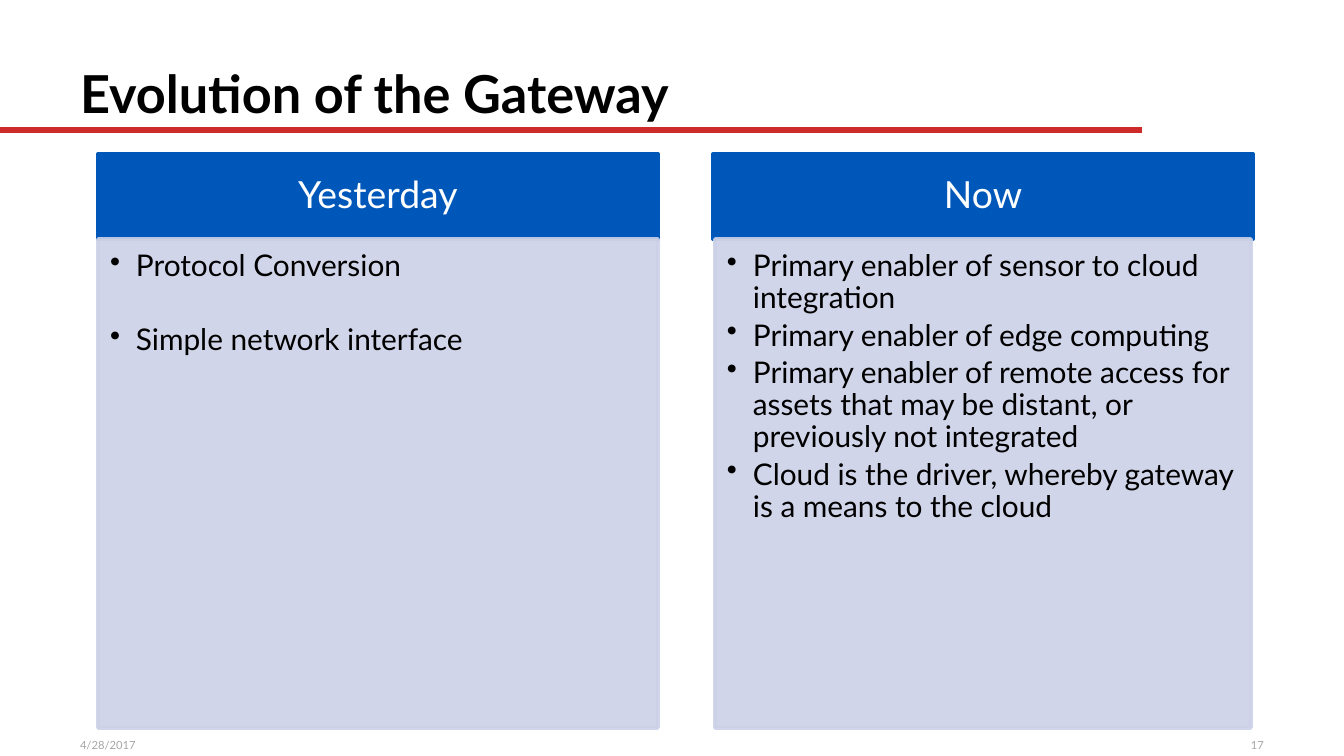
from pptx import Presentation
from pptx.dml.color import RGBColor
from pptx.enum.shapes import MSO_CONNECTOR as CONN, MSO_SHAPE as SHAPE
from pptx.enum.text import MSO_ANCHOR as ANCHOR, PP_ALIGN as ALIGN
from pptx.oxml.ns import qn
from pptx.util import Pt
from lxml.etree import SubElement

COLORS = {
    "rule": "CF2A2A",
    "black": "000000",
    "white": "FFFFFF",
    "footer": "A6A6A6",
    "header": "0057BA",
    "body": "CCD1E7",
}
FONT = "Lato"
SLIDE_W, SLIDE_H = 1344, 756
BULLET_INDENT = 26


def px(n):
    return round(n * 914400 / 134.4)


def rgb(name):
    return RGBColor.from_string(COLORS[name])


def add_run(p, text, size, color, bold=False):
    r = p.add_run()
    r.text = text
    r.font.name = FONT
    r.font.size = Pt(size)
    r.font.bold = bold
    r.font.color.rgb = rgb(color)


def set_frame(tf, anchor, insets):
    tf.word_wrap = True
    tf.vertical_anchor = anchor
    tf.margin_left, tf.margin_top, tf.margin_right, tf.margin_bottom = map(px, insets)


def add_label(s, box, text, size, color, bold=False, align=ALIGN.LEFT):
    tf = s.shapes.add_textbox(*map(px, box)).text_frame
    set_frame(tf, ANCHOR.BOTTOM, (13, 7, 13, 7))
    p = tf.paragraphs[0]
    p.alignment = align
    add_run(p, text, size, color, bold)


def add_panel(s, box, color, alpha=100):
    sp = s.shapes.add_shape(SHAPE.RECTANGLE, *map(px, box))
    sp.shadow.inherit = False
    sp.line.width = Pt(2)
    for fill in (sp.fill, sp.line.fill):
        fill.solid()
        fill.fore_color.rgb = rgb(color)
    if alpha < 100:
        for clr in sp._element.spPr.iter(qn("a:srgbClr")):
            SubElement(clr, qn("a:alpha"), val=str(alpha * 1000))
    return sp


def add_bullet(p):
    pPr = p._p.get_or_add_pPr()
    pPr.set("marL", str(px(BULLET_INDENT)))
    pPr.set("indent", str(-px(BULLET_INDENT)))
    SubElement(pPr, qn("a:buChar"), char="•")


def add_header(s, box, text):
    tf = add_panel(s, box, "header").text_frame
    set_frame(tf, ANCHOR.MIDDLE, (21, 12, 21, 12))
    p = tf.paragraphs[0]
    p.alignment = ALIGN.CENTER
    p.line_spacing = 0.9
    add_run(p, text, 20, "white")


def add_body(s, box, items, gap):
    tf = add_panel(s, box, "body", 90).text_frame
    set_frame(tf, ANCHOR.TOP, (12, 12, 14, 19))
    for i, text in enumerate(items):
        p = tf.add_paragraph() if i else tf.paragraphs[0]
        add_bullet(p)
        p.alignment = ALIGN.LEFT
        p.line_spacing = 0.9
        p.space_before = Pt(gap if i else 0)
        p.space_after = Pt(2.7)
        add_run(p, text, 16, "black")


def add_column(s, box, title, items, inset=0, gap=0):
    x, y, w, h = box
    head_h = 85
    add_header(s, (x, y, w, head_h), title)
    add_body(s, (x + inset, y + head_h, w - 2 * inset, h - head_h), items, gap)


def add_title(s, box, text):
    x, y, w, h = box
    rule = s.shapes.add_connector(CONN.STRAIGHT, 0, px(y + h - 1), px(1142), px(y + h - 1))
    rule.line.color.rgb = rgb("rule")
    rule.line.width = Pt(3)
    SubElement(rule._element.spPr, qn("a:effectLst"))
    add_label(s, box, text, 28, "black", True)


def add_footer(s, box, date, number):
    x, y, w, h = box
    label_w = 313
    add_label(s, (x, y, label_w, h), date, 6, "footer")
    add_label(s, (x + w - label_w, y, label_w, h), number, 6, "footer", align=ALIGN.RIGHT)


def main():
    prs = Presentation()
    prs.slide_width, prs.slide_height = px(SLIDE_W), px(SLIDE_H)
    s = prs.slides.add_slide(prs.slide_layouts[6])
    add_title(s, (67, 15, 985, 116), "Evolution of the Gateway")
    add_footer(s, (67, 719, 1210, 40), "4/28/2017", "17")
    add_column(s, (98, 154, 560, 574), "Yesterday", [
        "Protocol Conversion",
        "Simple network interface",
    ], gap=19.8)
    add_column(s, (713, 154, 540, 574), "Now", [
        "Primary enabler of sensor to cloud integration",
        "Primary enabler of edge computing",
        "Primary enabler of remote access for assets that may be distant, or previously not integrated",
        "Cloud is the driver, whereby gateway is a means to the cloud",
    ], inset=2)
    prs.save("out.pptx")


if __name__ == "__main__":
    main()
